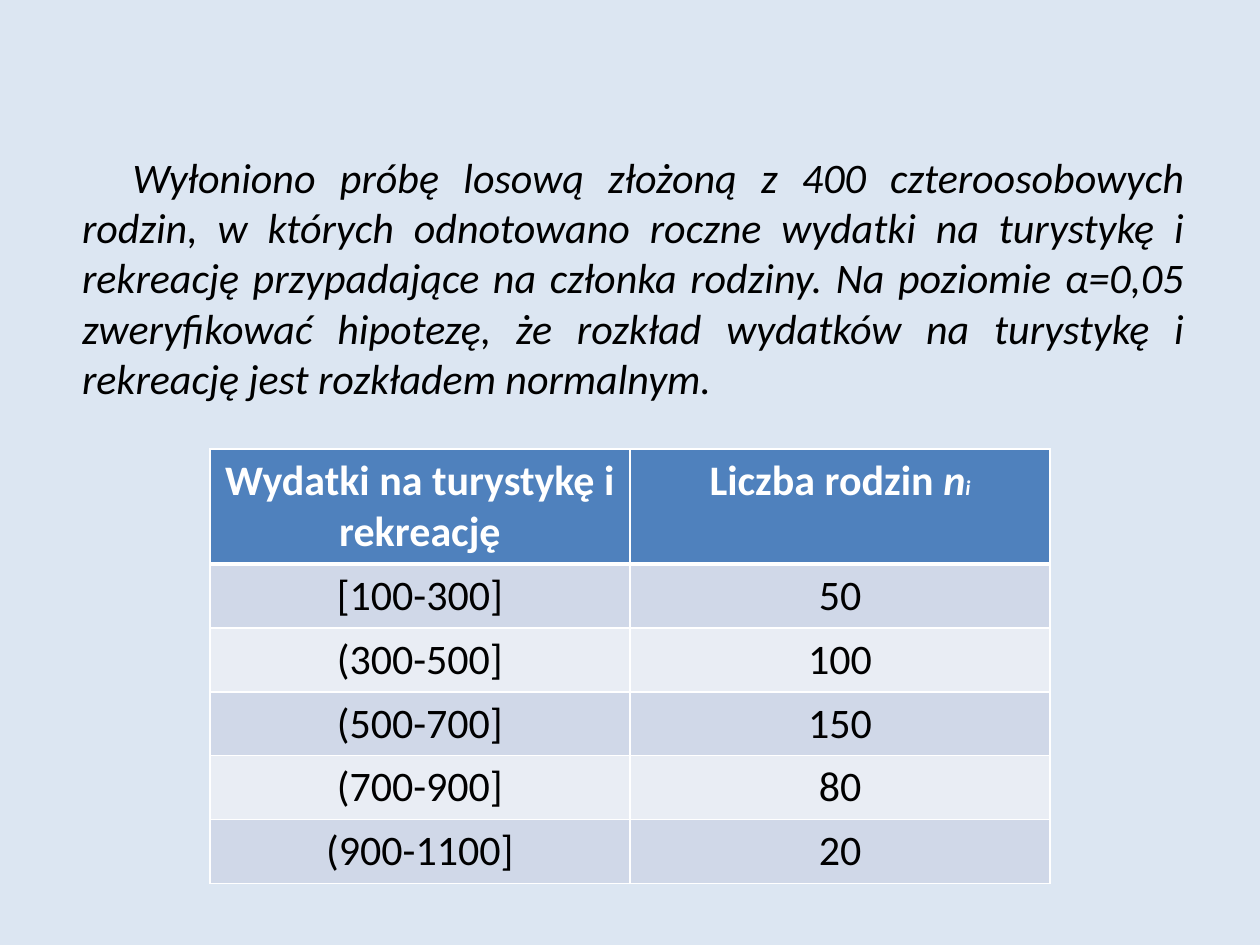
from pptx import Presentation
from pptx.dml.color import RGBColor
from pptx.enum.text import MSO_ANCHOR, MSO_AUTO_SIZE, PP_ALIGN as Align
from pptx.oxml import parse_xml
from pptx.oxml.ns import nsdecls
from pptx.util import Cm, Pt

TASK = (
    "Wyłoniono próbę losową złożoną z 400 czteroosobowych rodzin, w których "
    "odnotowano roczne wydatki na turystykę i rekreację przypadające na członka "
    "rodziny. Na poziomie α=0,05 zweryfikować hipotezę, że rozkład wydatków na "
    "turystykę i rekreację jest rozkładem normalnym."
)
ROWS = [
    ("Wydatki na turystykę i rekreację", "Liczba rodzin "),
    ("[100-300]", "50"),
    ("(300-500]", "100"),
    ("(500-700]", "150"),
    ("(700-900]", "80"),
    ("(900-1100]", "20"),
]
HEADER_FILL = "4F81BD"
BAND_FILLS = ("E9EDF4", "D0D8E8")


def style(span, color, size=24, bold=False, italic=False):
    span.font.name = "Calibri"
    span.font.size = Pt(size)
    span.font.bold = bold
    span.font.italic = italic
    span.font.color.rgb = RGBColor.from_string(color)


def add_borders(cell, top, bottom):
    """Draw white cell edges; top and bottom widths are in points."""
    props = cell._tc.get_or_add_tcPr()
    widths = (("lnL", 1), ("lnR", 1), ("lnT", top), ("lnB", bottom))
    for position, (edge, width) in enumerate(widths):
        props.insert(position, parse_xml(
            f'<a:{edge} {nsdecls("a")} w="{Pt(width)}"><a:solidFill>'
            f'<a:srgbClr val="FFFFFF"/></a:solidFill></a:{edge}>'))


deck = Presentation()
deck.slide_width, deck.slide_height = Cm(25.4), Cm(19.05)
page = deck.slides.add_slide(deck.slide_layouts[1])
page.background.fill.solid()
page.background.fill.fore_color.rgb = RGBColor.from_string("DCE6F2")
title = page.shapes.title.element
title.getparent().remove(title)

# Task description
body = page.placeholders[1]
body.left, body.top, body.width, body.height = Cm(1.4), Cm(2.92), Cm(22.73), Cm(5.33)
frame = body.text_frame
frame.text = TASK
frame.auto_size = MSO_AUTO_SIZE.NONE
frame.vertical_anchor = MSO_ANCHOR.TOP
para = frame.paragraphs[0]
para.alignment = Align.JUSTIFY
para_props = para._p.get_or_add_pPr()
para_props.set("marL", "0")
para_props.set("indent", str(Cm(1.02)))
para_props.append(parse_xml(f'<a:buNone {nsdecls("a")}/>'))
style(para.runs[0], "000000", italic=True)

# Frequency table
table = page.shapes.add_table(
    len(ROWS), 2, Cm(4.23), Cm(9.05), Cm(16.94), Cm(8.75)).table
for row_index, values in enumerate(ROWS):
    is_header = row_index == 0
    table.rows[row_index].height = Cm(2.32 if is_header else 1.28)
    for column_index, value in enumerate(values):
        cell = table.cell(row_index, column_index)
        cell.text = value
        cell.fill.solid()
        fill = HEADER_FILL if is_header else BAND_FILLS[row_index % 2]
        cell.fill.fore_color.rgb = RGBColor.from_string(fill)
        add_borders(cell, top=3 if row_index == 1 else 1, bottom=3 if is_header else 1)
        para = cell.text_frame.paragraphs[0]
        para.alignment = Align.CENTER
        style(para.runs[0], "FFFFFF" if is_header else "000000", bold=is_header)

# Symbol nᵢ in the count heading
heading = table.cell(0, 1).text_frame.paragraphs[0]
for symbol, size in (("n", 24), ("i", 12)):
    span = heading.add_run()
    span.text = symbol
    style(span, "FFFFFF", size, bold=True, italic=True)

deck.save("out.pptx")
